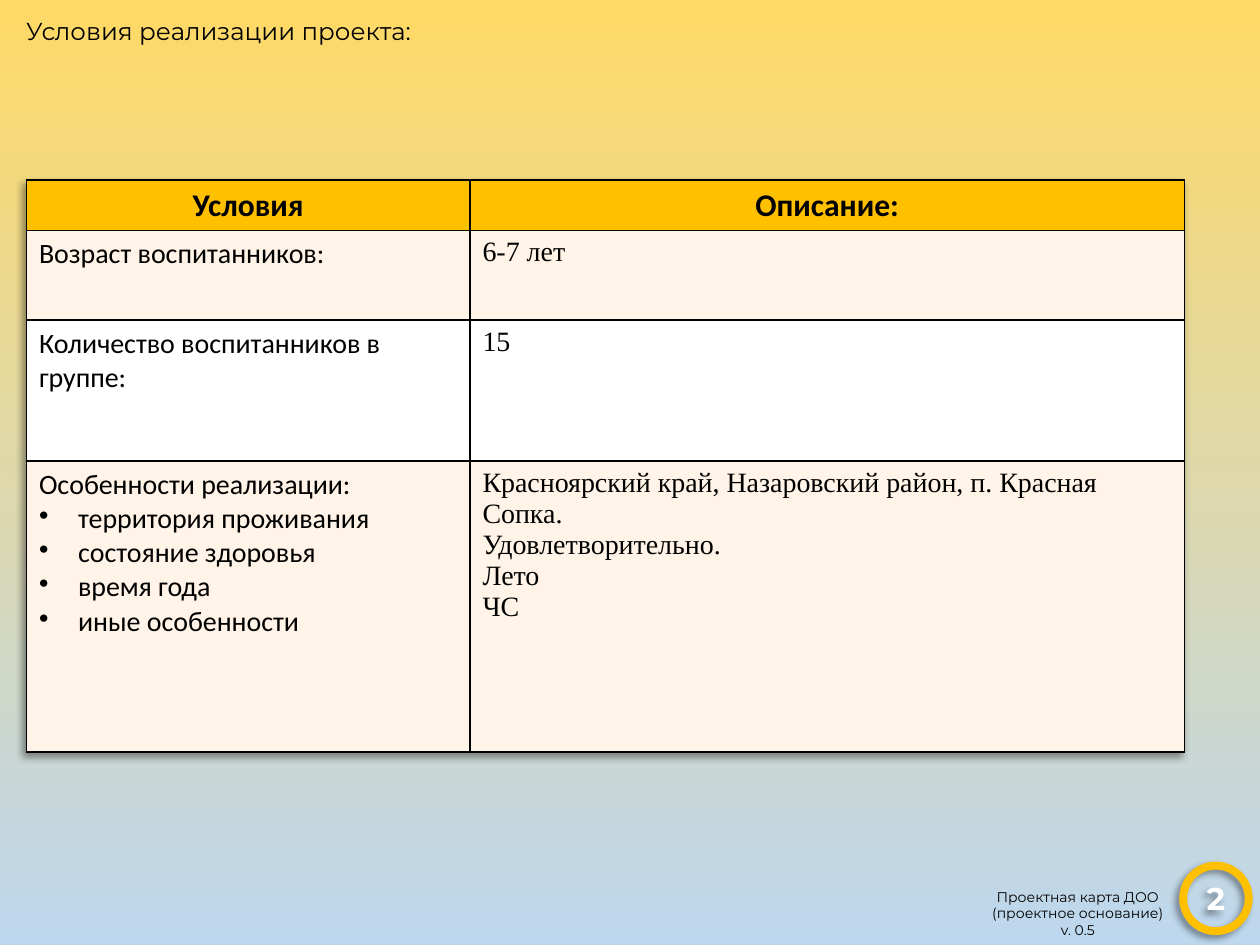
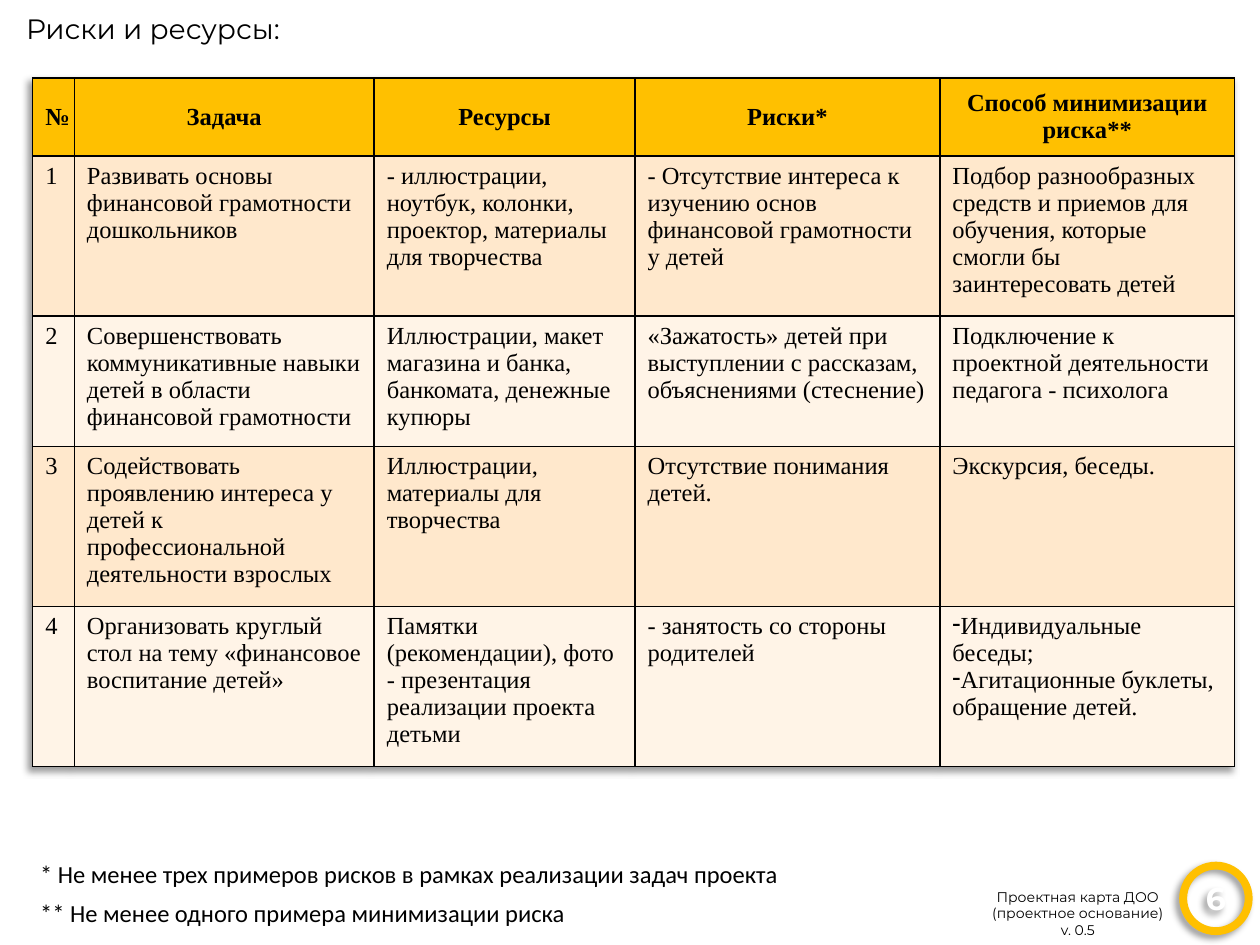
from dataclasses import dataclass
from typing import Any, Optional, Union

import pptx
import pptx.dml.color
import pptx.enum.shapes
import pptx.enum.text
import pptx.oxml
import pptx.oxml.ns
import pptx.util

COLORS = {
    "text": "000000", "white": "FFFFFF", "gold": "FFC000",
    "peach": "FFE8CC", "cream": "FFF4E7",
    "sky_top": "FFD966", "sky_bottom": "BDD7EE",
}
HEAD, BODY, SERIF = "Montserrat", "Calibri", "Times New Roman"
ALIGN = pptx.enum.text.PP_ALIGN
ANCHOR = pptx.enum.text.MSO_ANCHOR

# The slide is a grid of 100 columns by 75 rows
WIDTH, HEIGHT = pptx.util.Inches(10), pptx.util.Inches(7.5)
COLS, ROWS = 100, 75


@dataclass(frozen=True)
class Box:
    col: float
    row: float
    cols: float
    rows: float

    def emu(self) -> tuple[int, int, int, int]:
        return x(self.col), y(self.row), x(self.cols), y(self.rows)


@dataclass(frozen=True)
class Item:
    """A bulleted paragraph; the indent is in grid columns."""
    text: str
    bullet: str = "•"
    indent: float = 0


Paragraph = Union[str, Item]
Text = Union[Paragraph, list[Paragraph]]


@dataclass(frozen=True)
class TableSpec:
    col: float
    row: float
    widths: list[float]
    heights: list[float]
    cells: list[list[Text]]
    bands: list[str]
    fonts: list[str]
    head_font: str
    head_size: float
    size: float
    head_anchor: Any = ANCHOR.TOP


FOOTER = Box(77.2, 70, 16.7, 5)
BADGE = Box(93.9, 68.7, 5.2, 5.2)


def x(cols: float) -> int:
    return round(WIDTH * cols / COLS)


def y(rows: float) -> int:
    return round(HEIGHT * rows / ROWS)


def rgb(name: str) -> pptx.dml.color.RGBColor:
    return pptx.dml.color.RGBColor.from_string(COLORS[name])


def xml(body: str) -> Any:
    tag, rest = body.split(" ", 1)
    return pptx.oxml.parse_xml(f"<a:{tag} {pptx.oxml.ns.nsdecls('a')} {rest}")


def shadow() -> Any:
    return xml(
        'effectLst ><a:outerShdw blurRad="50800" dist="38100" dir="8100000">'
        f'<a:srgbClr val="{COLORS["text"]}"><a:alpha val="40000"/></a:srgbClr>'
        "</a:outerShdw></a:effectLst>")


# Text
def write(tf: Any, text: Text, *, size: float, font: str, color: str = "text",
          bold: bool = False, align: Optional[Any] = None) -> None:
    for i, item in enumerate(text if isinstance(text, list) else [text]):
        p = tf.paragraphs[0] if i == 0 else tf.add_paragraph()
        p.alignment = align
        if isinstance(item, Item):
            pPr = p._p.get_or_add_pPr()
            pPr.set("marL", str(x(item.indent)))
            pPr.set("indent", str(-x(item.indent)))
            pPr.append(xml(f'buChar char="{item.bullet}"/>'))
        r = p.add_run()
        r.text = item.text if isinstance(item, Item) else item
        r.font.size = pptx.util.Pt(size)
        r.font.name = font
        r.font.bold = bold
        r.font.color.rgb = rgb(color)


def add_text(s: Any, box: Box, text: Text, wrap: bool = True, **fmt: Any) -> None:
    tf = s.shapes.add_textbox(*box.emu()).text_frame
    tf.word_wrap = wrap
    tf.auto_size = pptx.enum.text.MSO_AUTO_SIZE.SHAPE_TO_FIT_TEXT
    write(tf, text, **fmt)


# Tables
def style_cell(cell: Any, fill: str) -> None:
    tcPr = cell._tc.get_or_add_tcPr()
    for side in "LRTB":
        tcPr.append(xml(f'ln{side} w="12700"><a:solidFill><a:srgbClr '
                        f'val="{COLORS["text"]}"/></a:solidFill></a:ln{side}>'))
    cell.fill.solid()
    cell.fill.fore_color.rgb = rgb(fill)


def add_table(s: Any, spec: TableSpec) -> None:
    box = Box(spec.col, spec.row, sum(spec.widths), sum(spec.heights))
    table = s.shapes.add_table(
        len(spec.heights), len(spec.widths), *box.emu()).table
    table.first_row = table.horz_banding = False
    table._tbl.tblPr.insert(0, shadow())
    for column, width in zip(table.columns, spec.widths):
        column.width = x(width)
    for row, height in zip(table.rows, spec.heights):
        row.height = y(height)
    for i, texts in enumerate(spec.cells):
        for j, text in enumerate(texts):
            cell = table.cell(i, j)
            if i == 0:
                style_cell(cell, "gold")
                cell.vertical_anchor = spec.head_anchor
                write(cell.text_frame, text, size=spec.head_size,
                      font=spec.head_font, bold=True, align=ALIGN.CENTER)
            else:
                style_cell(cell, spec.bands[(i - 1) % len(spec.bands)])
                write(cell.text_frame, text, size=spec.size, font=spec.fonts[j])


# Parts shared by the slides
def add_badge(s: Any, number: int) -> None:
    sp = s.shapes.add_shape(
        pptx.enum.shapes.MSO_SHAPE.OVAL, *BADGE.emu())
    sp.fill.background()
    sp.line.color.rgb = rgb("gold")
    sp.line.width = pptx.util.Pt(4.5)
    sp.shadow.inherit = False
    spPr = sp._element.spPr
    spPr.replace(spPr.find(pptx.oxml.ns.qn("a:effectLst")), shadow())
    tf = sp.text_frame
    tf.margin_left = tf.margin_right = 0
    tf.vertical_anchor = ANCHOR.MIDDLE
    write(tf, str(number), size=18, font=HEAD, color="white", bold=True,
          align=ALIGN.CENTER)


def add_slide(prs: Any, number: int, title: str, title_box: Box,
              title_size: float, table: TableSpec) -> Any:
    s = prs.slides.add_slide(prs.slide_layouts[6])
    add_text(s, FOOTER,
             ["Проектная карта ДОО", "(проектное основание)", "v. 0.5"],
             wrap=False, size=8, font=HEAD, align=ALIGN.CENTER)
    add_text(s, title_box, title, size=title_size, font=HEAD)
    add_table(s, table)
    add_badge(s, number)
    return s


CONDITIONS = TableSpec(
    col=2.1, row=14.3, widths=[35.2, 56.7], heights=[4, 7.1, 11.2, 23.1],
    bands=["cream", "white"], fonts=[BODY, SERIF],
    head_font=BODY, head_size=18, size=16,
    cells=[
        ["Условия", "Описание:"],
        ["Возраст воспитанников:", "6-7 лет"],
        ["Количество воспитанников в группе:", "15"],
        [["Особенности реализации:",
          *(Item(t, indent=3.1) for t in (
              "территория проживания", "состояние здоровья",
              "время года", "иные особенности"))],
         ["Красноярский край, Назаровский район, п. Красная Сопка.",
          "Удовлетворительно.", "Лето", "ЧС"]],
    ])

RISKS = TableSpec(
    col=2.6, row=6.2, widths=[3.3, 23.8, 20.7, 24.2, 23.4],
    heights=[6.2, 12.7, 10.3, 12.7, 12.7],
    bands=["peach", "cream"], fonts=[SERIF] * 5,
    head_font=SERIF, head_size=14, size=14, head_anchor=ANCHOR.MIDDLE,
    cells=[
        ["№", "Задача", "Ресурсы", "Риски*", "Способ минимизации риска**"],
        ["1", "Развивать основы финансовой грамотности дошкольников",
         "- иллюстрации, ноутбук, колонки, проектор, материалы для творчества",
         "- Отсутствие интереса к изучению основ финансовой грамотности у детей",
         "Подбор разнообразных средств и приемов для обучения, которые "
         "смогли бы заинтересовать детей"],
        ["2", "Совершенствовать коммуникативные навыки детей в области "
         "финансовой грамотности",
         "Иллюстрации, макет магазина и банка, банкомата, денежные купюры",
         "«Зажатость» детей при выступлении с рассказам, объяснениями "
         "(стеснение)",
         "Подключение к проектной деятельности педагога - психолога"],
        ["3", "Содействовать проявлению интереса у детей к профессиональной "
         "деятельности взрослых",
         "Иллюстрации, материалы для творчества",
         "Отсутствие понимания детей.", "Экскурсия, беседы."],
        ["4", "Организовать круглый стол на тему «финансовое воспитание детей»",
         "Памятки (рекомендации), фото - презентация реализации проекта детьми",
         "- занятость со стороны родителей",
         [Item("Индивидуальные беседы;", "-"),
          Item("Агитационные буклеты, обращение детей.", "-")]],
    ])


def main() -> None:
    prs = pptx.Presentation()
    prs.slide_width, prs.slide_height = WIDTH, HEIGHT

    # Project conditions
    s = add_slide(prs, 2, "Условия реализации проекта:",
                  Box(1.1, 0.8, 82.2, 3.4), 14, CONDITIONS)
    fill = s.background.fill
    fill.gradient()
    fill.gradient_angle = 270
    for stop, name in zip(fill.gradient_stops, ("sky_top", "sky_bottom")):
        stop.color.rgb = rgb(name)

    # Risks and resources
    s = add_slide(prs, 6, "Риски и ресурсы:",
                  Box(1.1, 0.4, 82.2, 3.7), 16, RISKS)
    s.background.fill.solid()
    s.background.fill.fore_color.rgb = rgb("white")
    footnotes = [
        ("* Не менее трех примеров рисков в рамках реализации задач проекта", 61.2),
        ("** Не менее одного примера минимизации риска", 44.1),
    ]
    for i, (note, cols) in enumerate(footnotes):
        add_text(s, Box(2.2, 67.7 + 3.1 * i, cols, 3.4), note, wrap=False,
                 size=14, font=BODY)

    prs.save("out.pptx")


if __name__ == "__main__":
    main()
